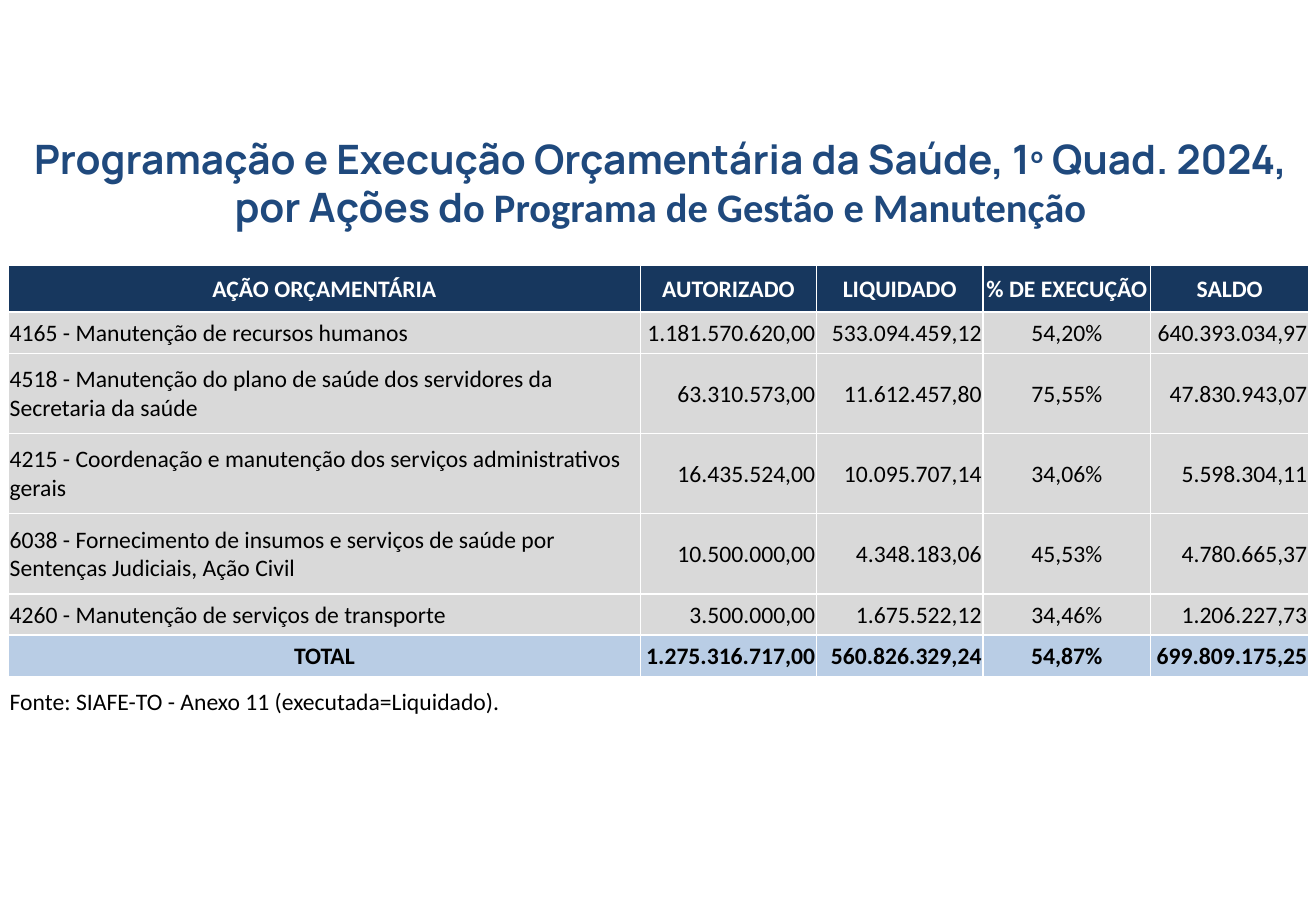
import pptx
import pptx.dml.color
import pptx.enum.text
import pptx.oxml
import pptx.oxml.ns
import pptx.util
from pptx.util import Inches

COLORS = {
    "title": "1F497D",
    "header": "17375E",
    "action": "D9D9D9",
    "total": "B9CDE5",
    "white": "FFFFFF",
    "black": "000000",
}
ALIGN = pptx.enum.text.PP_ALIGN
MIDDLE = pptx.enum.text.MSO_ANCHOR.MIDDLE

TITLE_RUNS = [
    ("Programação e Execução Orçamentária da Saúde, 1º Quad. 2024, por Ações d", "Manrope"),
    ("o Programa de Gestão e Manutenção", "Calibri"),
]
HEADERS = ["AÇÃO ORÇAMENTÁRIA", "AUTORIZADO", "LIQUIDADO", "% DE EXECUÇÃO", "SALDO"]
ACTIONS = [
    ["4165 - Manutenção de recursos humanos",
     "1.181.570.620,00", "533.094.459,12", "54,20%", "640.393.034,97"],
    ["4518 - Manutenção do plano de saúde dos servidores da Secretaria da saúde",
     "63.310.573,00", "11.612.457,80", "75,55%", "47.830.943,07"],
    ["4215 - Coordenação e manutenção dos serviços administrativos gerais",
     "16.435.524,00", "10.095.707,14", "34,06%", "5.598.304,11"],
    ["6038 - Fornecimento de insumos e serviços de saúde por Sentenças Judiciais, Ação Civil",
     "10.500.000,00", "4.348.183,06", "45,53%", "4.780.665,37"],
    ["4260 - Manutenção de serviços de transporte",
     "3.500.000,00", "1.675.522,12", "34,46%", "1.206.227,73"],
]
TOTAL = ["TOTAL", "1.275.316.717,00", "560.826.329,24", "54,87%", "699.809.175,25"]
SOURCE = "Fonte: SIAFE-TO - Anexo 11 (executada=Liquidado)."

COLUMN_WIDTHS = [5.2, 1.45, 1.37, 1.38, 1.3]
ROW_HEIGHTS = [0.39, 0.34, 0.66, 0.66, 0.66, 0.34, 0.34, 0.42]
CENTERED = [ALIGN.CENTER] * 5
AMOUNTS = [ALIGN.RIGHT, ALIGN.RIGHT, ALIGN.CENTER, ALIGN.RIGHT]


def rgb(name):
    return pptx.dml.color.RGBColor.from_string(COLORS[name])


def add_run(paragraph, text, color, **font):
    run = paragraph.add_run()
    run.text = text
    run.font.color.rgb = rgb(color)
    for name, value in font.items():
        setattr(run.font, name, value)


def set_borders(cell, color, width):
    properties = cell._tc.get_or_add_tcPr()
    for index, side in enumerate(("lnL", "lnR", "lnT", "lnB")):
        properties.insert(index, pptx.oxml.parse_xml(
            f'<a:{side} {pptx.oxml.ns.nsdecls("a")} w="{width}"><a:solidFill>'
            f'<a:srgbClr val="{COLORS[color]}"/></a:solidFill></a:{side}>'))


def fill_cell(cell, text, align, fill, color="black", bold=False):
    margins = {"margin_left": 0.01, "margin_right": 0.01,
               "margin_top": 0.01, "margin_bottom": 0}
    for name, value in margins.items():
        setattr(cell, name, Inches(value))
    cell.vertical_anchor = MIDDLE
    set_borders(cell, "white", pptx.util.Pt(1))
    if fill:
        cell.fill.solid()
        cell.fill.fore_color.rgb = rgb(fill)
    else:
        cell.fill.background()
    paragraph = cell.text_frame.paragraphs[0]
    paragraph.alignment = align
    add_run(paragraph, text, color, name="Calibri", size=pptx.util.Pt(14), bold=bold)


def place_title(slide, left, top, width, height):
    title = slide.shapes.title
    box = {"left": left, "top": top, "width": width, "height": height}
    for name, value in box.items():
        setattr(title, name, Inches(value))
    frame_format = {
        "margin_left": Inches(0.05), "margin_right": Inches(0.05),
        "margin_top": Inches(0.03), "margin_bottom": Inches(0.03),
        "word_wrap": True,
        "vertical_anchor": pptx.enum.text.MSO_ANCHOR.TOP,
        "auto_size": pptx.enum.text.MSO_AUTO_SIZE.SHAPE_TO_FIT_TEXT,
    }
    for name, value in frame_format.items():
        setattr(title.text_frame, name, value)
    paragraph = title.text_frame.paragraphs[0]
    paragraph.alignment = ALIGN.CENTER
    for text, font in TITLE_RUNS:
        add_run(paragraph, text, "title", name=font, size=pptx.util.Pt(24), bold=True)


def add_budget_table(slide, left, top, width, height):
    table = slide.shapes.add_table(
        len(ROW_HEIGHTS), len(COLUMN_WIDTHS),
        Inches(left), Inches(top), Inches(width), Inches(height)).table
    table.first_row = table.horz_banding = False
    for column, share in zip(table.columns, COLUMN_WIDTHS):
        column.width = Inches(width * share / sum(COLUMN_WIDTHS))
    for row, share in zip(table.rows, ROW_HEIGHTS):
        row.height = Inches(height * share / sum(ROW_HEIGHTS))

    header = (HEADERS, CENTERED, {"fill": "header", "color": "white", "bold": True})
    actions = [(action, [ALIGN.LEFT] + AMOUNTS, {"fill": "action"}) for action in ACTIONS]
    total = (TOTAL, [ALIGN.CENTER] + AMOUNTS, {"fill": "total", "bold": True})
    for row, (texts, aligns, style) in zip(table.rows, [header, *actions, total]):
        for cell, text, align in zip(row.cells, texts, aligns):
            fill_cell(cell, text, align, **style)

    last = len(ROW_HEIGHTS) - 1
    source = table.cell(last, 0)
    source.merge(table.cell(last, len(COLUMN_WIDTHS) - 1))
    fill_cell(source, SOURCE, ALIGN.LEFT, fill=None)


def main():
    deck = pptx.Presentation()
    deck.slide_width, deck.slide_height = Inches(10.83), Inches(7.5)
    slide = deck.slides.add_slide(deck.slide_layouts[5])
    place_title(slide, 0.02, 1.07, 10.83, 0.86)
    add_budget_table(slide, 0.07, 2.18, 10.7, 3.81)
    deck.save("out.pptx")


if __name__ == "__main__":
    main()
